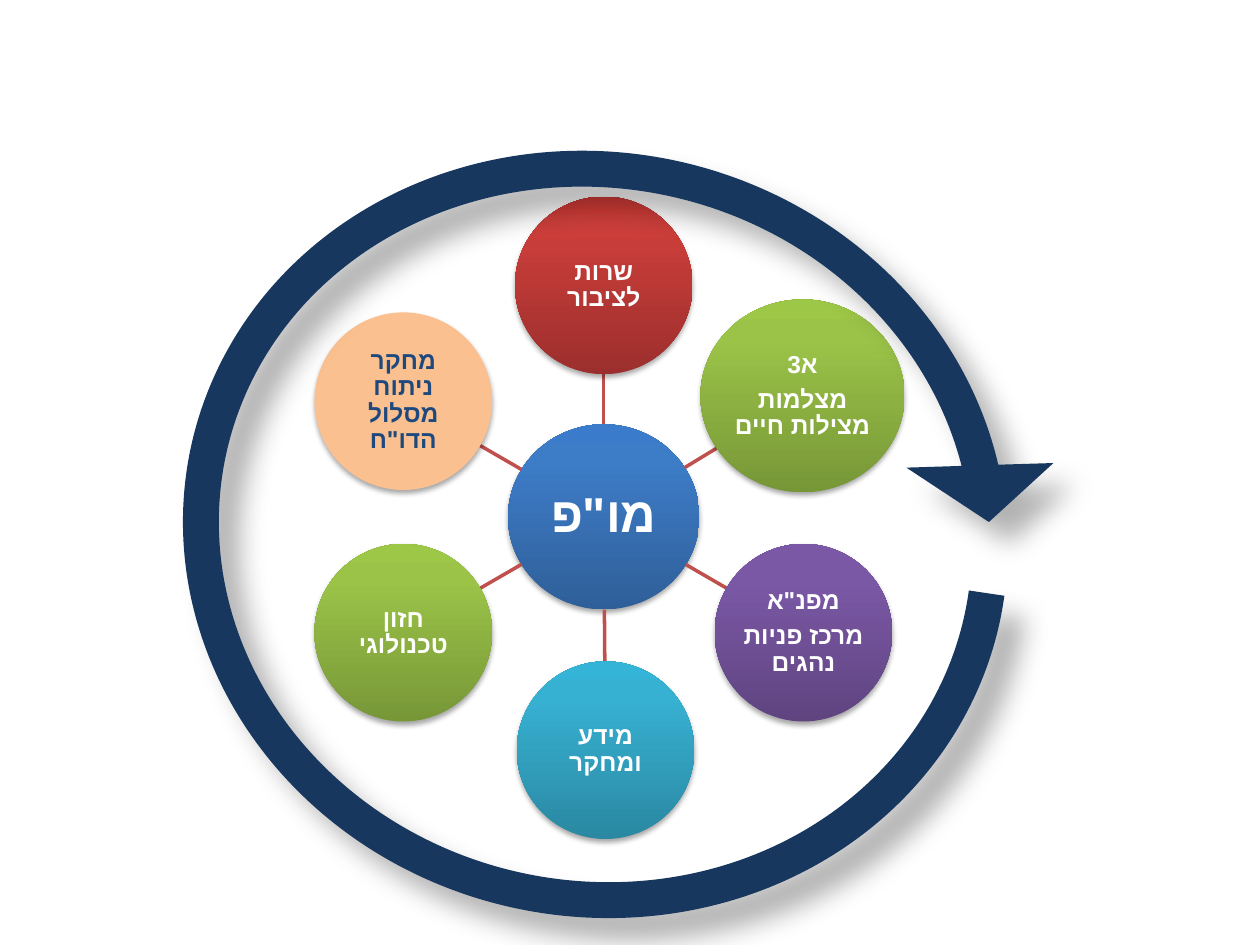
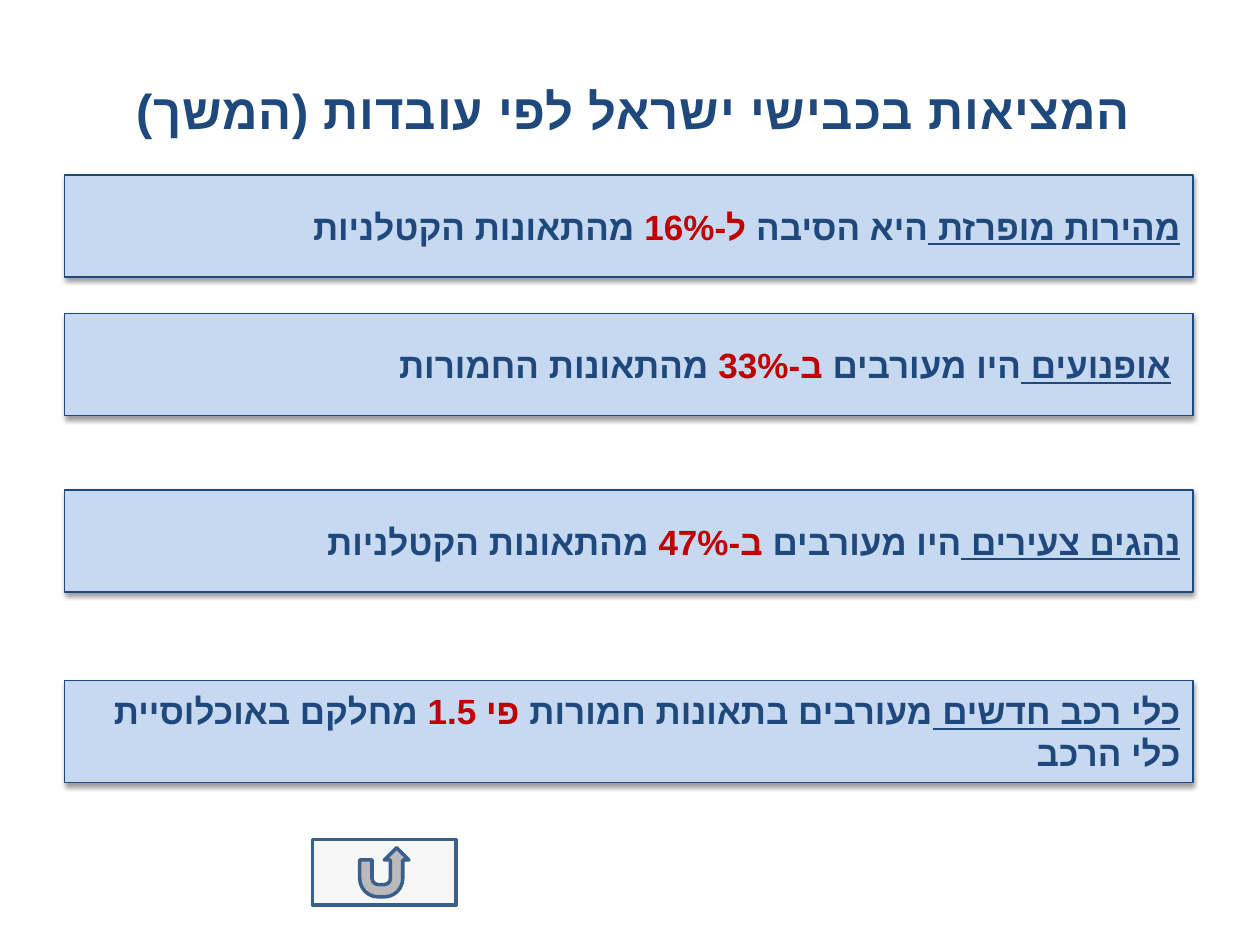
import math

from lxml import etree
from pptx import Presentation
from pptx.dml.color import RGBColor
from pptx.enum import lang, shapes, text
from pptx.oxml import ns
from pptx.util import Pt

COLORS = {
    "white": "FFFFFF", "navy": "1F497D", "arrow": "17375E", "spoke": "C0504D",
    "peach": "FAC090", "bar": "C6D9F1", "accent": "C00000",
    "button": "F2F2F2", "button_line": "3A5F8C", "shadow": "000000",
}
# Stops at 0, 80 and 100 percent, from bottom to top
GRADIENTS = {
    "blue": ("2F5F99", "3D7CC7", "3A7CCB"),
    "red": ("9C2F2D", "CB3E3A", "CE3B37"),
    "green": ("779737", "9BC348", "9DC746"),
    "purple": ("5F4480", "7B58A6", "7C57A8"),
    "teal": ("2A88A2", "37B1D2", "34B4D6"),
}
FONT = "Cabin"
HEBREW_FONT = "Arial"
HUB = (345, 295.4)
HUB_SIZE = (109.4, 105.8)
SPOKE = 132.3
DISC = (101.5, 101.5)
# paragraphs, fill, text colour, degrees from top, size, nudge
TOPICS = [
    (["שרות לציבור"], "red", "white", 0, DISC, (0, 0)),
    (["א3", "מצלמות מצילות חיים"], "green", "white", 60, (116.6, 110.2), (-1, -3)),
    (["מפנ\"א", "מרכז פניות נהגים"], "purple", "white", 120, DISC, (-0.5, 0)),
    (["מידע ומחקר"], "teal", "white", 180, DISC, (1, 1)),
    (["חזון טכנולוגי"], "green", "white", 240, DISC, (0, 0)),
    (["מחקר ניתוח מסלול הדו\"ח"], "peach", "navy", 300, DISC, (0, 0)),
]
UNDERLINED = {"underline": True}
ACCENT = {"color": "accent"}
# top of the bar, then its runs with their formats
FACTS = [
    (100, [("מהירות מופרזת ", UNDERLINED), ("היא הסיבה ", {}),
           ("ל-16%", ACCENT), (" מהתאונות הקטלניות", {})]),
    (179.3, [(" ", {}), ("אופנועים ", UNDERLINED), ("היו מעורבים ", {}),
             ("ב-33%", ACCENT), (" מהתאונות החמורות", {})]),
    (280, [("נהגים צעירים ", UNDERLINED), ("היו מעורבים ", {}),
           ("ב-47% ", ACCENT), ("מהתאונות הקטלניות", {})]),
    (389, [("כלי רכב חדשים ", UNDERLINED), ("מעורבים בתאונות חמורות ", {}),
           ("פי 1.5", ACCENT), (" מחלקם באוכלוסיית כלי הרכב", {})]),
]


def rgb(name):
    return RGBColor.from_string(COLORS[name])


def sub(parent, tag, **attrs):
    """Append a DrawingML child element."""
    el = etree.SubElement(parent, ns.qn("a:" + tag))
    for key, value in attrs.items():
        el.set(key, str(value))
    return el


def add_run(p, content, size=20, color="navy", underline=False, spacing=None):
    r = p.add_run()
    r.text = content
    f = r.font
    f.name, f.size, f.bold = FONT, Pt(size), True
    f.color.rgb = rgb(color)
    f.language_id = lang.MSO_LANGUAGE_ID.HEBREW
    if underline:
        f.underline = True
    r_pr = r._r.get_or_add_rPr()
    if spacing:
        r_pr.set("spc", str(round(spacing * 100)))
    sub(r_pr, "cs", typeface=HEBREW_FONT)


def set_rtl(p, align):
    p.alignment = align
    p._p.get_or_add_pPr().set("rtl", "1")


def add_shadow(sp, opacity, blur, dist, angle):
    effects = sp._element.spPr.find(ns.qn("a:effectLst"))
    shadow = sub(effects, "outerShdw", blurRad=Pt(blur), dist=Pt(dist),
                 dir=angle * 60000, algn="ctr", rotWithShape=0)
    sub(sub(shadow, "srgbClr", val=COLORS["shadow"]), "alpha", val=opacity * 1000)


def set_gradient(sp, stops):
    solid = sp._element.spPr.find(ns.qn("a:solidFill"))
    grad = etree.Element(ns.qn("a:gradFill"), rotWithShape="1")
    stop_list = sub(grad, "gsLst")
    for pos, color in zip((0, 80, 100), stops):
        sub(sub(stop_list, "gs", pos=pos * 1000), "srgbClr", val=color)
    sub(grad, "lin", ang=270 * 60000, scaled=0)
    solid.getparent().replace(solid, grad)


def add_shape(slide, kind, box, fill, line=None, line_width=0.75):
    sp = slide.shapes.add_shape(kind, *map(Pt, box))
    sp.shadow.inherit = False
    sp.fill.solid()
    if fill in GRADIENTS:
        set_gradient(sp, GRADIENTS[fill])
    else:
        sp.fill.fore_color.rgb = rgb(fill)
    if line:
        sp.line.color.rgb = rgb(line)
        sp.line.width = Pt(line_width)
    else:
        sp.line.fill.background()
    return sp


def edge_point(center, size, target):
    """Point where an ellipse's outline faces the target."""
    dx, dy = target[0] - center[0], target[1] - center[1]
    scale = 1 / math.hypot(dx / (size[0] / 2), dy / (size[1] / 2))
    return center[0] + dx * scale, center[1] + dy * scale


def add_spoke(slide, center, size):
    start = edge_point(HUB, HUB_SIZE, center)
    end = edge_point(center, size, HUB)
    c = slide.shapes.add_connector(shapes.MSO_CONNECTOR.STRAIGHT,
                                   *map(Pt, (*start, *end)))
    c.line.color.rgb = rgb("spoke")
    c.line.width = Pt(2)
    sub(c._element.spPr, "effectLst")


def add_disc(slide, center, size, paragraphs, fill, color, font_size=14):
    (x, y), (width, height) = center, size
    box = (x - width / 2, y - height / 2, width, height)
    sp = add_shape(slide, shapes.MSO_SHAPE.OVAL, box, fill)
    add_shadow(sp, 35, 3.1, 1.8, 90)
    tf = sp.text_frame
    tf.word_wrap = True
    tf.vertical_anchor = text.MSO_ANCHOR.MIDDLE
    tf.margin_left = tf.margin_right = tf.margin_top = tf.margin_bottom = Pt(1)
    for i, content in enumerate(paragraphs):
        p = tf.add_paragraph() if i else tf.paragraphs[0]
        set_rtl(p, text.PP_ALIGN.CENTER)
        p.line_spacing = 0.9
        p.space_after = Pt(0.35 * font_size)
        add_run(p, content, size=font_size, color=color)


def add_cycle_arrow(slide):
    sp = add_shape(slide, shapes.MSO_SHAPE.CIRCULAR_ARROW,
                   (72, 55.2, 536.4, 500.4), "arrow")
    sp.rotation = 12.1
    for i, value in enumerate((0.041, 5.028, 202.629, 213.86, 0.084)):
        sp.adjustments[i] = value
    add_shadow(sp, 30, 15, 18, 45)


def add_fact_bar(slide, top, runs):
    sp = add_shape(slide, shapes.MSO_SHAPE.RECTANGLE, (36.7, top, 645, 58.3),
                   "bar", "navy")
    add_shadow(sp, 38, 3.1, 1.6, 90)
    tf = sp.text_frame
    tf.word_wrap = True
    tf.vertical_anchor = text.MSO_ANCHOR.MIDDLE
    p = tf.paragraphs[0]
    set_rtl(p, text.PP_ALIGN.RIGHT)
    for content, style in runs:
        add_run(p, content, **style)


def set_title(slide, content):
    sp = slide.shapes.title
    sp.left, sp.top, sp.width, sp.height = map(Pt, (23.8, 37.4, 676.8, 33.8))
    tf = sp.text_frame
    tf.auto_size = text.MSO_AUTO_SIZE.NONE
    tf.vertical_anchor = text.MSO_ANCHOR.MIDDLE
    p = tf.paragraphs[0]
    set_rtl(p, text.PP_ALIGN.CENTER)
    p.line_spacing = 1.5
    add_run(p, content, size=28, spacing=0.5)


def add_return_button(slide):
    sp = add_shape(slide, shapes.MSO_SHAPE.ACTION_BUTTON_RETURN,
                   (178.6, 479.7, 82, 37.5), "button", "button_line", 2)
    color = sp._element.spPr.find(ns.qn("a:solidFill"))[0]
    sub(color, "alpha", val=62000)


def build_wheel(slide):
    add_disc(slide, HUB, HUB_SIZE, ["מו\"פ"], "blue", "white", font_size=28)
    for paragraphs, fill, color, degrees, size, (dx, dy) in TOPICS:
        a = math.radians(degrees)
        center = (HUB[0] + SPOKE * math.sin(a) + dx,
                  HUB[1] - SPOKE * math.cos(a) + dy)
        add_spoke(slide, center, size)
        add_disc(slide, center, size, paragraphs, fill, color)
    add_cycle_arrow(slide)


def build_facts(slide):
    set_title(slide, "המציאות בכבישי ישראל לפי עובדות (המשך)")
    for top, runs in FACTS:
        add_fact_bar(slide, top, runs)
    add_return_button(slide)


def main():
    prs = Presentation()
    prs.slide_width, prs.slide_height = Pt(720), Pt(540)
    title_only, blank = prs.slide_layouts[5], prs.slide_layouts[6]
    build_wheel(prs.slides.add_slide(blank))
    build_facts(prs.slides.add_slide(title_only))
    prs.save("out.pptx")


if __name__ == "__main__":
    main()
